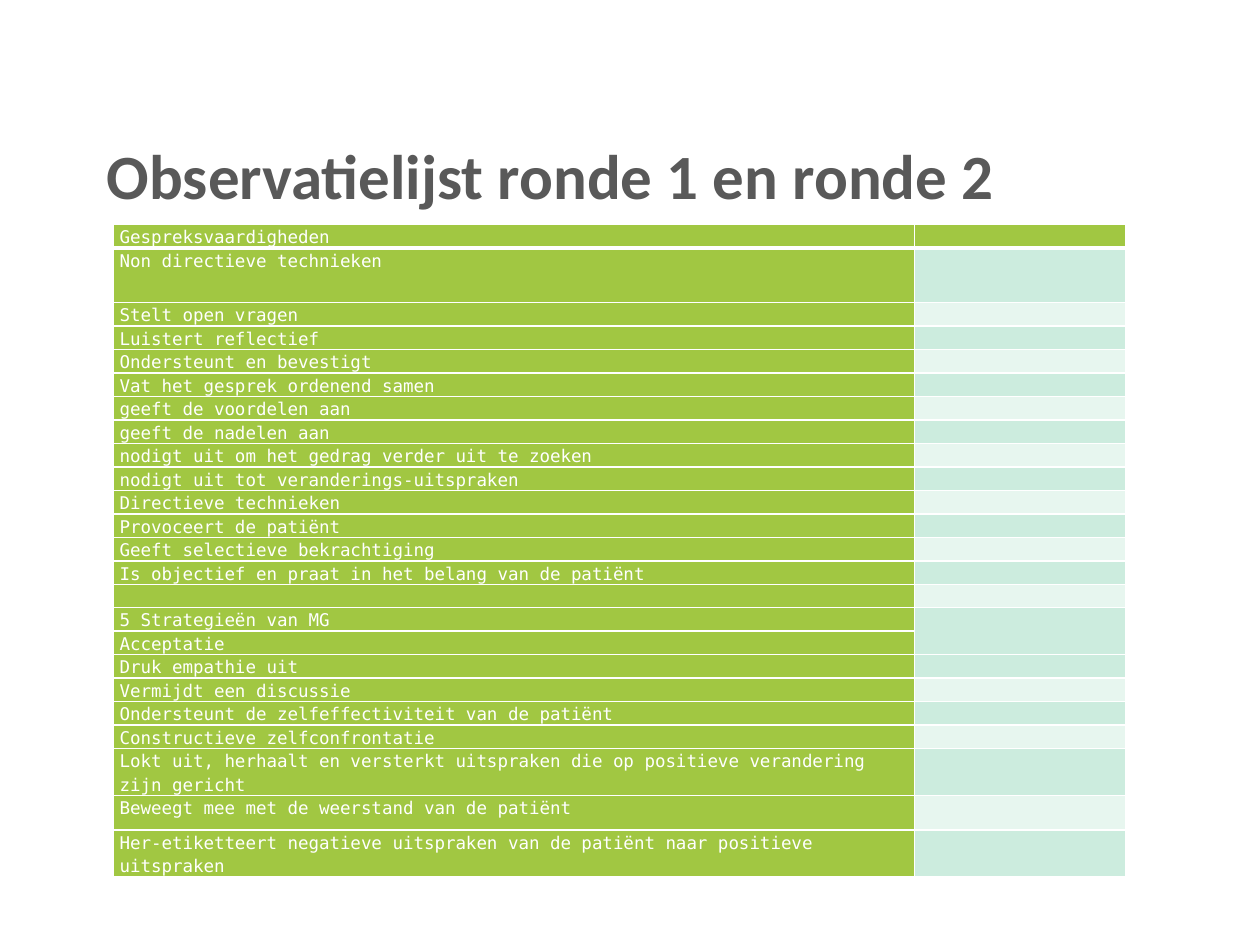
from lxml.etree import SubElement
from pptx import Presentation
from pptx.dml.color import RGBColor
from pptx.enum.text import MSO_ANCHOR, PP_ALIGN
from pptx.oxml.ns import qn
from pptx.util import Cm, Pt

GREEN = RGBColor(0xA1, 0xC7, 0x42)
MINT = RGBColor(0xCC, 0xEC, 0xDE)
PALE = RGBColor(0xE7, 0xF6, 0xEF)
GREY = RGBColor(0x59, 0x59, 0x59)
WHITE = RGBColor(0xFF, 0xFF, 0xFF)

SKILLS = [
    "Gespreksvaardigheden",
    "Non directieve technieken",
    "Stelt open vragen",
    "Luistert reflectief",
    "Ondersteunt en bevestigt",
    "Vat het gesprek ordenend samen",
    "geeft de voordelen aan",
    "geeft de nadelen aan",
    "nodigt uit om het gedrag verder uit te zoeken",
    "nodigt uit tot veranderings-uitspraken",
    "Directieve technieken",
    "Provoceert de patiënt",
    "Geeft selectieve bekrachtiging",
    "Is objectief en praat in het belang van de patiënt",
    "",
    "5 Strategieën van MG",
    "Acceptatie",
    "Druk empathie uit",
    "Vermijdt een discussie",
    "Ondersteunt de zelfeffectiviteit van de patiënt",
    "Constructieve zelfconfrontatie",
    "Lokt uit, herhaalt en versterkt uitspraken die op positieve verandering zijn gericht",
    "Beweegt mee met de weerstand van de patiënt",
    "Her-etiketteert negatieve uitspraken van de patiënt naar positieve uitspraken",
]
WIDTHS = [Cm(16.15), Cm(4.25)]
ROW = Cm(0.47)
TALL = {1: Cm(1.1), 21: Cm(0.94), 22: Cm(0.7), 23: Cm(0.94)}
MERGED = 15  # score cell shared with the next row


def set_title(slide, text):
    title = slide.shapes.title
    title.left, title.top = Cm(1.9), Cm(2.72)
    title.width, title.height = Cm(21.6), Cm(1.6)
    frame = title.text_frame
    frame.text = text
    frame.vertical_anchor = MSO_ANCHOR.MIDDLE
    para = frame.paragraphs[0]
    para.alignment = PP_ALIGN.LEFT
    font = para.font
    font.name, font.size, font.bold = "Calibri", Pt(36), True
    font.color.rgb = GREY


def add_edges(cell, top, bottom):
    props = cell._tc.get_or_add_tcPr()
    for side, width in zip("LRTB", (1, 1, top, bottom)):
        line = SubElement(props, qn(f"a:ln{side}"), w=str(Pt(width)))
        fill = SubElement(line, qn("a:solidFill"))
        SubElement(fill, qn("a:srgbClr"), val=str(WHITE))


def set_cell(cell, text, color, top=1, bottom=1):
    cell.margin_left = cell.margin_right = Cm(0.12)
    cell.margin_top = cell.margin_bottom = 0
    add_edges(cell, top, bottom)
    cell.fill.solid()
    cell.fill.fore_color.rgb = color
    para = cell.text_frame.paragraphs[0]
    para.line_spacing = 1.15
    font = para.font
    font.name, font.size = "DejaVu Sans Mono", Pt(10)
    font.color.rgb = WHITE
    if text:
        para.text = text
    else:
        # Keeps blank rows as low as the filled ones
        SubElement(para._p, qn("a:endParaRPr"), sz="1000")


def add_list(slide):
    heights = [TALL.get(i, ROW) for i in range(len(SKILLS))]
    table = slide.shapes.add_table(
        len(SKILLS), 2, Cm(2.29), Cm(4.53), sum(WIDTHS), sum(heights)
    ).table
    table.first_row = table.horz_banding = False
    for col, width in zip(table.columns, WIDTHS):
        col.width = width
    for i, (skill, height) in enumerate(zip(SKILLS, heights)):
        table.rows[i].height = height
        band = GREEN if i == 0 else (PALE, MINT)[i % 2]
        edges = {0: (1, 3), 1: (3, 1)}.get(i, (1, 1))
        set_cell(table.cell(i, 0), skill, GREEN, *edges)
        set_cell(table.cell(i, 1), "", band, *edges)
    table.cell(MERGED, 1).merge(table.cell(MERGED + 1, 1))


def main():
    prs = Presentation()
    prs.slide_width, prs.slide_height = Cm(25.4), Cm(19.05)
    slide = prs.slides.add_slide(prs.slide_layouts[5])
    set_title(slide, "Observatielijst ronde 1 en ronde 2")
    add_list(slide)
    prs.save("out.pptx")


if __name__ == "__main__":
    main()
